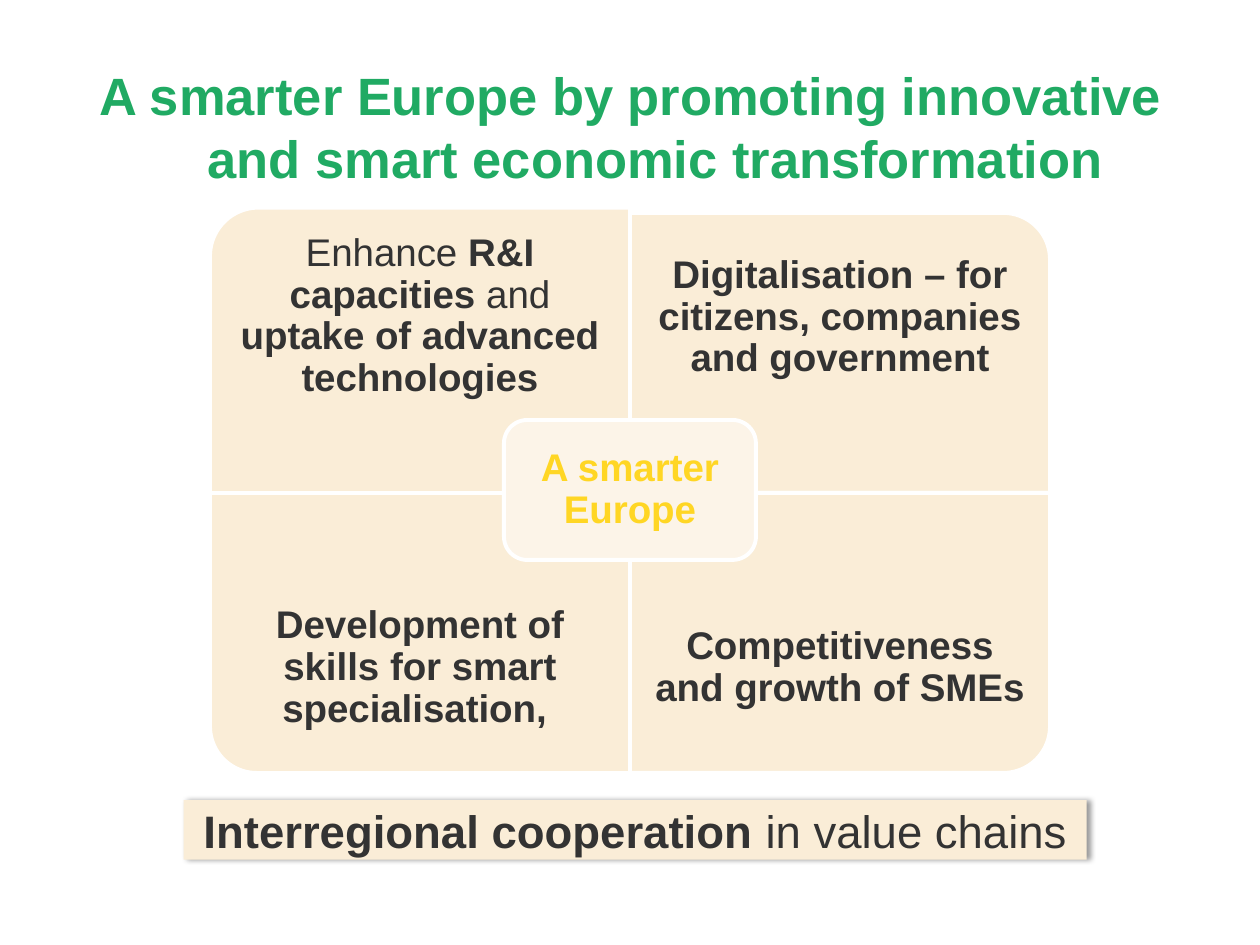
"""Build the "A smarter Europe" slide: a four-part matrix with a centre and a banner."""
from dataclasses import dataclass

from lxml.etree import SubElement
from pptx import Presentation
from pptx.dml.color import RGBColor
from pptx.enum.shapes import MSO_SHAPE
from pptx.enum.text import MSO_ANCHOR, MSO_AUTO_SIZE, PP_ALIGN
from pptx.oxml.ns import qn
from pptx.util import Pt


@dataclass(frozen=True)
class Theme:
    """Colours, type sizes and font of the slide."""
    font: str = "Arial"
    title: str = "20AA63"
    ink: str = "333333"
    accent: str = "FFD624"
    panel: str = "FAEDD7"
    centre: str = "FCF4E8"
    line: str = "FFFFFF"
    title_size: int = 30
    body_size: int = 22
    banner_size: int = 26


THEME = Theme()
LEFT, MID_X, MID_Y = 120, 360, 281.7
WIDTH, HEIGHT, TEXT_HEIGHT = 240, 160, 120


def apply(obj, values):
    """Set each attribute of an object from a dict."""
    for name, value in values.items():
        setattr(obj, name, value)


def write(s, runs, size, color, spacing=None, inset=None, anchor=MSO_ANCHOR.MIDDLE):
    """Fill a shape with one centred paragraph of (text, bold) runs."""
    tf = s.text_frame
    apply(tf, {"word_wrap": True, "auto_size": MSO_AUTO_SIZE.NONE,
               "vertical_anchor": anchor})
    if inset is not None:
        sides = ("left", "top", "right", "bottom")
        apply(tf, {f"margin_{side}": Pt(inset) for side in sides})
    p = tf.paragraphs[0]
    apply(p, {"alignment": PP_ALIGN.CENTER, "line_spacing": spacing})
    for text, bold in runs:
        r = p.add_run()
        r.text = text
        apply(r.font, {"name": THEME.font, "size": Pt(size), "bold": bold})
        r.font.color.rgb = RGBColor.from_string(color)
    return p


def add_title(s, text):
    """Place the title with a hanging indent."""
    apply(s, {"left": Pt(31), "top": Pt(31.7), "width": Pt(659), "height": Pt(57)})
    p = write(s, [(text, True)], THEME.title_size, THEME.title, Pt(36),
              anchor=MSO_ANCHOR.TOP)
    s.text_frame.margin_top = Pt(4.4)
    pPr = p._p.get_or_add_pPr()
    for name, value in {"marL": Pt(28), "indent": Pt(-28)}.items():
        pPr.set(name, str(value))


def add_panel(shapes, kind, box, fill, line=THEME.line, rotation=0):
    """Add a filled shape in a visible box, turned by quarter turns."""
    x, y, w, h = box
    if rotation % 180:
        x, y, w, h = x + (w - h) / 2, y + (h - w) / 2, h, w
    s = shapes.add_shape(kind, Pt(x), Pt(y), Pt(w), Pt(h))
    apply(s, {"rotation": rotation})
    s.shadow.inherit = False
    s.fill.solid()
    s.fill.fore_color.rgb = RGBColor.from_string(fill)
    if line:
        s.line.color.rgb = RGBColor.from_string(line)
        s.line.width = Pt(2.25)
    else:
        s.line.fill.background()
    return s


def add_label(shapes, box, runs, color=THEME.ink, inset=12.3):
    """Add a text box with a centred body label."""
    s = shapes.add_textbox(*map(Pt, box))
    write(s, runs, THEME.body_size, color, 0.9, inset)


def add_quadrant(shapes, column, row, rotation, runs, extra=0):
    """Add one corner panel and its label, the panel grown by extra height."""
    x = (LEFT, MID_X)[column]
    height = HEIGHT + extra
    top = MID_Y if row else MID_Y - HEIGHT - extra / 2
    text_height = height * TEXT_HEIGHT / HEIGHT
    text_top = top + height - text_height if row else top
    add_panel(shapes, MSO_SHAPE.ROUND_1_RECTANGLE,
              (x, top, WIDTH, height), THEME.panel, rotation=rotation)
    add_label(shapes, (x, text_top, WIDTH, text_height), runs)


def add_shadow(s):
    """Give a shape a soft shadow to its right."""
    shadow = SubElement(s._element.spPr.find(qn("a:effectLst")), qn("a:outerShdw"))
    values = {"blurRad": Pt(3.1), "dist": Pt(1.8), "dir": 0,
              "algn": "ctr", "rotWithShape": 0}
    for name, value in values.items():
        shadow.set(name, str(value))
    color = SubElement(shadow, qn("a:srgbClr"), val="000000")
    SubElement(color, qn("a:alpha"), val="40000")


def add_matrix(shapes):
    """Group the four quadrants and the centre."""
    group = shapes.add_group_shape().shapes
    add_quadrant(group, 0, 0, 270, [
        ("Enhance ", False), ("R&I capacities ", True),
        ("and ", False), ("uptake of advanced technologies", True)], extra=6.2)
    add_quadrant(group, 1, 0, 0, [
        ("Digitalisation – for citizens, companies and government", True)])
    add_quadrant(group, 0, 1, 180, [
        ("Development of skills for smart specialisation, ", True)])
    add_quadrant(group, 1, 1, 90, [("Competitiveness and growth of SMEs", True)])
    add_panel(group, MSO_SHAPE.ROUNDED_RECTANGLE, (288, 240, 144, 80), THEME.centre)
    add_label(group, (292, 244, 136, 72), [("A smarter Europe", True)],
              THEME.accent, 6.6)


def add_banner(shapes):
    """Add the shadowed banner below the matrix."""
    s = add_panel(shapes, MSO_SHAPE.RECTANGLE, (105, 457.2, 516, 34),
                  THEME.panel, line=None)
    write(s, [("Interregional cooperation ", True), ("in value chains", False)],
          THEME.banner_size, THEME.ink)
    add_shadow(s)


def main():
    """Build and save the slide."""
    prs = Presentation()
    apply(prs, {"slide_width": Pt(720), "slide_height": Pt(540)})
    shapes = prs.slides.add_slide(prs.slide_layouts[5]).shapes
    add_title(shapes.title, "A smarter Europe by promoting innovative "
                            "and smart economic transformation")
    add_matrix(shapes)
    add_banner(shapes)
    prs.save("out.pptx")


if __name__ == "__main__":
    main()
